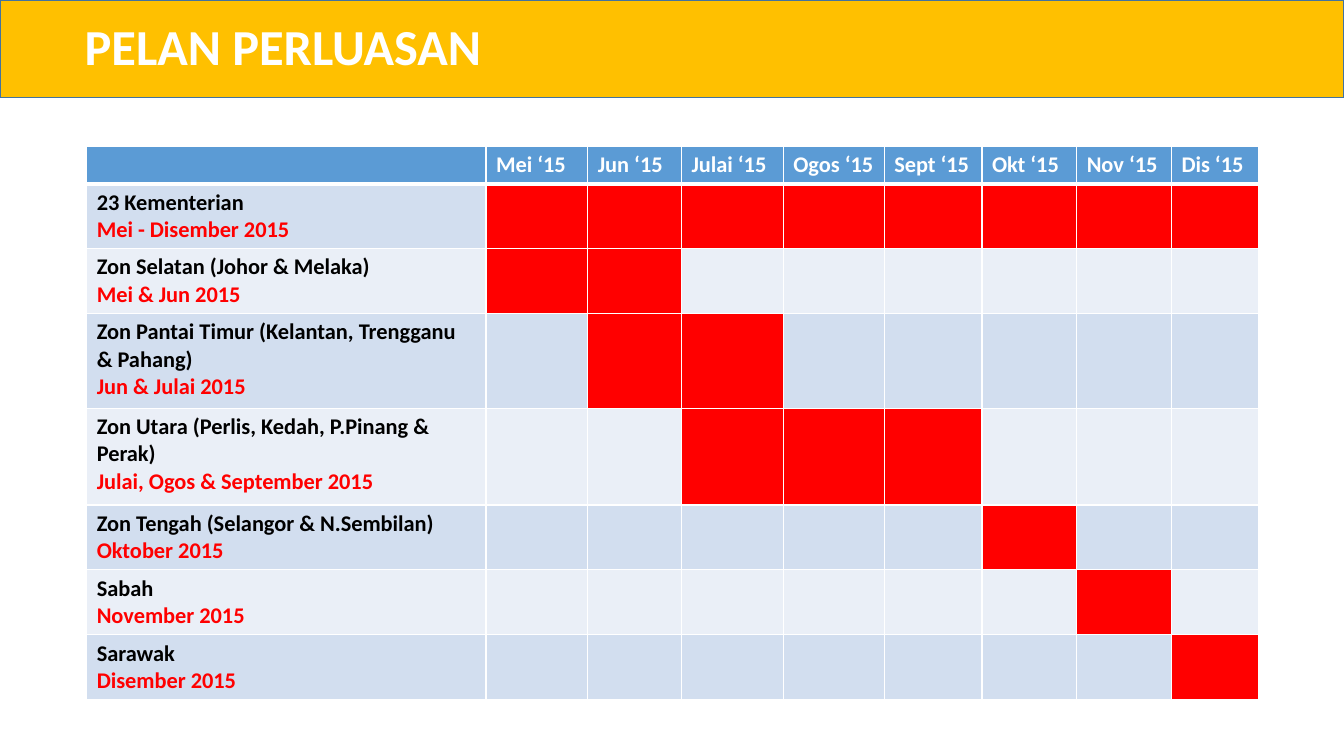
"""Build the expansion plan slide: a title bar over a month-by-zone schedule table."""
from lxml import etree
from pptx import Presentation, util as u
from pptx.dml.color import RGBColor
from pptx.enum import shapes, text
from pptx.oxml import parse_xml
from pptx.oxml.ns import qn

HUES = {"bar": "FFC000", "edge": "43739E", "head": "5B9BD5", "odd": "D2DEEF",
        "even": "EAEFF7", "busy": "FF0000", "white": "FFFFFF", "black": "000000"}
MONTHS = ["Mei", "Jun", "Julai", "Ogos", "Sept", "Okt", "Nov", "Dis"]
ZONES = [
    ("23 Kementerian", "Mei - Disember 2015", 1, 8, 0.64),
    ("Zon Selatan (Johor & Melaka)", "Mei & Jun 2015", 1, 2, 0.64),
    ("Zon Pantai Timur (Kelantan, Trengganu & Pahang)", "Jun & Julai 2015", 2, 3, 0.94),
    ("Zon Utara (Perlis, Kedah, P.Pinang & Perak)", "Julai, Ogos & September 2015", 3, 5, 0.96),
    ("Zon Tengah (Selangor & N.Sembilan)", "Oktober 2015", 6, 6, 0.64),
    ("Sabah", "November 2015", 7, 7, 0.64),
    ("Sarawak", "Disember 2015", 8, 8, 0.64),
]
WIDTHS = [3.96, 1.01, 0.93, 1.01, 1, 0.97, 0.94, 0.94, 0.86]
HEIGHTS = [0.37] + [zone[-1] for zone in ZONES]
NS = 'xmlns:a="http://schemas.openxmlformats.org/drawingml/2006/main"'


def write(para, words, size, hue):
    """Add one bold run to a paragraph."""
    run = para.add_run()
    run.text = words
    for key, value in {"size": u.Pt(size), "bold": True, "name": "Calibri"}.items():
        setattr(run.font, key, value)
    run.font.color.rgb = RGBColor.from_string(HUES[hue])
    return run


def paint(cell, hue, base):
    """Give a cell its white borders and its fill."""
    props = cell._tc.get_or_add_tcPr()
    for side, width in {"L": 1, "R": 1, "T": 1, "B": base}.items():
        props.append(parse_xml(
            f'<a:ln{side} {NS} w="{u.Pt(width)}"><a:solidFill>'
            f'<a:srgbClr val="{HUES["white"]}"/></a:solidFill></a:ln{side}>'))
    cell.fill.solid()
    cell.fill.fore_color.rgb = RGBColor.from_string(HUES[hue])


deck = Presentation()
deck.slide_width, deck.slide_height = u.Inches(13.33), u.Inches(7.5)
slide = deck.slides.add_slide(deck.slide_layouts[5])

bar = slide.shapes.add_shape(shapes.MSO_SHAPE.RECTANGLE, 0, 0, deck.slide_width, u.Inches(0.97))
bar.shadow.inherit = False
bar.fill.solid()
bar.fill.fore_color.rgb = RGBColor.from_string(HUES["bar"])
bar.line.color.rgb = RGBColor.from_string(HUES["edge"])
bar.line.width = u.Pt(1)

title = slide.shapes.title
title._element.addprevious(bar._element)
for key, value in {"left": 0.74, "top": 0.01, "width": 9.2, "height": 0.96}.items():
    setattr(title, key, u.Inches(value))
title.text_frame.vertical_anchor = text.MSO_ANCHOR.MIDDLE
para = title.text_frame.paragraphs[0]
para.alignment = text.PP_ALIGN.LEFT
para.line_spacing = 0.9
run = write(para, "PELAN PERLUASAN", 36, "white")
run._r.rPr.find(qn("a:solidFill")).addnext(parse_xml(
    f'<a:effectLst {NS}><a:outerShdw blurRad="38100" dist="38100" dir="2700000" algn="tl">'
    f'<a:srgbClr val="{HUES["black"]}"><a:alpha val="43000"/></a:srgbClr>'
    '</a:outerShdw></a:effectLst>'))

grid = slide.shapes.add_table(
    len(HEIGHTS), len(WIDTHS), u.Inches(0.86), u.Inches(1.45),
    u.Inches(sum(WIDTHS)), u.Inches(sum(HEIGHTS))).table
for col, width in zip(grid.columns, WIDTHS):
    col.width = u.Inches(width)
for row, height in zip(grid.rows, HEIGHTS):
    row.height = u.Inches(height)

for col in range(len(WIDTHS)):
    cell = grid.cell(0, col)
    paint(cell, "head", 3)
    if col:
        write(cell.text_frame.paragraphs[0], f"{MONTHS[col - 1]} ‘15", 16, "white")
corner = grid.cell(0, 0).text_frame.paragraphs[0]
etree.SubElement(corner._p, qn("a:endParaRPr"), sz="1600")

for row, (zone, dates, first, last, height) in enumerate(ZONES, 1):
    band = "odd" if row % 2 else "even"
    for col in range(len(WIDTHS)):
        paint(grid.cell(row, col), "busy" if first <= col <= last else band, 1)
    frame = grid.cell(row, 0).text_frame
    write(frame.paragraphs[0], zone, 16, "black")
    write(frame.add_paragraph(), dates, 16, "busy")

deck.save("out.pptx")
